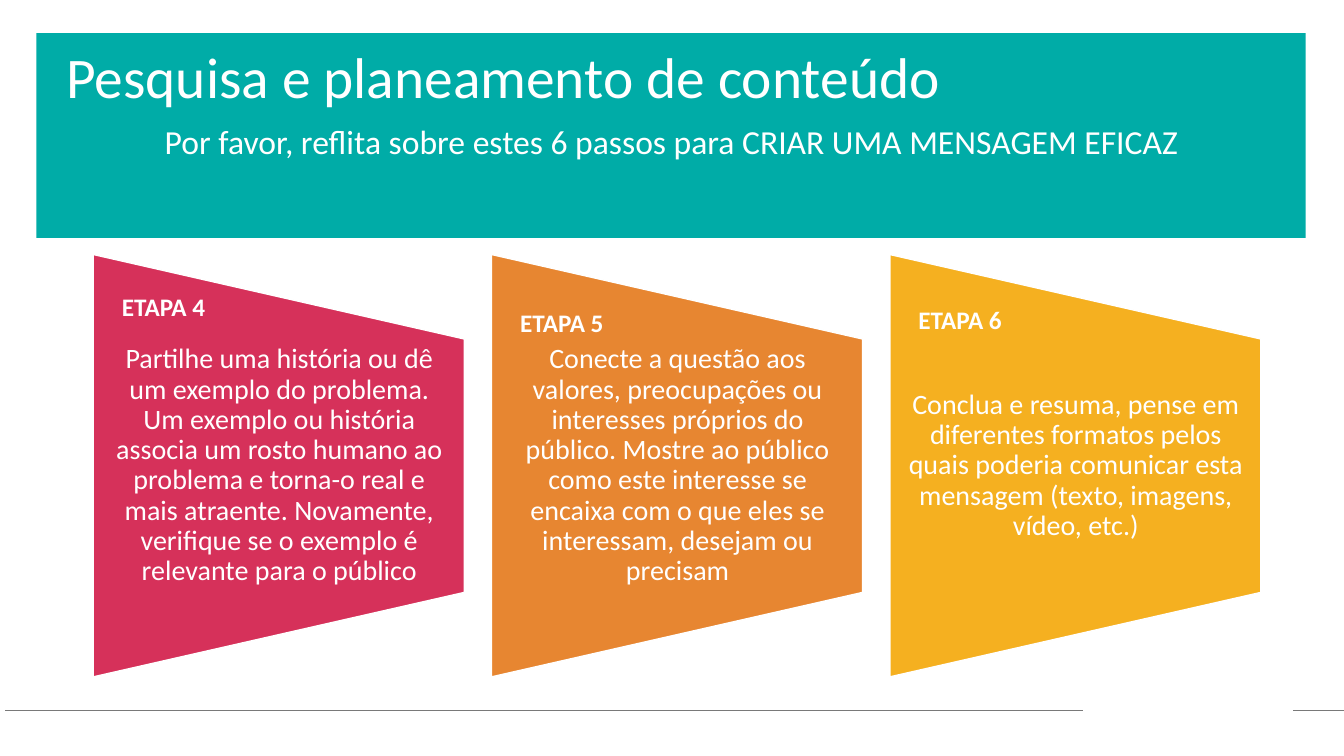
from pptx import Presentation
from pptx.dml.color import RGBColor
from pptx.enum.shapes import MSO_CONNECTOR, MSO_SHAPE
from pptx.enum.text import MSO_ANCHOR, PP_ALIGN
from pptx.oxml.ns import qn
from pptx.util import Inches, Pt
from lxml import etree

COLORS = {
    "teal": "00ACA7",
    "crimson": "D6315A",
    "orange": "E78631",
    "yellow": "F5B020",
    "white": "FFFFFF",
    "grey": "797979",
}


def color(name):
    return RGBColor.from_string(COLORS[name])


def write(para, text, size, bold=False, align=PP_ALIGN.LEFT):
    para.text = text
    para.alignment = align
    for span in para.runs:
        span.font.name = "Calibri"
        span.font.size = Pt(size)
        span.font.bold = bold
        span.font.color.rgb = color("white")


deck = Presentation()
deck.slide_width = Inches(13.33)
deck.slide_height = Inches(7.5)
page = deck.slides.add_slide(deck.slide_layouts[6])

# Header band
band = page.shapes.add_shape(
    MSO_SHAPE.RECTANGLE, Inches(0.36), Inches(0.33), Inches(12.59), Inches(2.03))
band.shadow.inherit = False
band.fill.solid()
band.fill.fore_color.rgb = color("teal")
band.line.fill.background()

# Footer rule in two parts
for start, end in [(10.74, 0.05), (13.33, 12.82)]:
    rule = page.shapes.add_connector(
        MSO_CONNECTOR.STRAIGHT, Inches(start), Inches(7.05), Inches(end), Inches(7.05))
    rule.line.color.rgb = color("grey")
    rule.line.width = Pt(0.5)
    etree.SubElement(rule._element.spPr, qn("a:effectLst"))

# Step cards: fill, label, label top, message
steps = [
    ("crimson", "ETAPA 4", 2.84,
     "Partilhe uma história ou dê um exemplo do problema. Um exemplo ou história "
     "associa um rosto humano ao problema e torna-o real e mais atraente. "
     "Novamente, verifique se o exemplo é relevante para o público"),
    ("orange", "ETAPA 5", 3.0,
     "Conecte a questão aos valores, preocupações ou interesses próprios do público. "
     "Mostre ao público como este interesse se encaixa com o que eles se interessam, "
     "desejam ou precisam"),
    ("yellow", "ETAPA 6", 2.97,
     "Conclua e resuma, pense em diferentes formatos pelos quais poderia comunicar "
     "esta mensagem (texto, imagens, vídeo, etc.)"),
]
for index, (fill, label, label_top, message) in enumerate(steps):
    offset = 3.95 * index

    card = page.shapes.add_shape(
        MSO_SHAPE.FLOWCHART_MANUAL_OPERATION,
        Inches(0.67 + offset), Inches(2.78), Inches(4.19), Inches(3.68))
    card.rotation = 270
    card.shadow.inherit = False
    card.fill.solid()
    card.fill.fore_color.rgb = color(fill)
    card.line.color.rgb = color("white")
    card.line.width = Pt(1)

    message_box = page.shapes.add_textbox(
        Inches(0.93 + offset), Inches(3.36), Inches(3.68), Inches(2.52))
    frame = message_box.text_frame
    frame.word_wrap = True
    frame.vertical_anchor = MSO_ANCHOR.MIDDLE
    frame.margin_left = frame.margin_right = Inches(0.14)
    frame.margin_top = frame.margin_bottom = Inches(0)
    write(frame.paragraphs[0], message, 20, align=PP_ALIGN.CENTER)
    frame.paragraphs[0].line_spacing = 0.9

    label_box = page.shapes.add_textbox(
        Inches(1.11 + offset), Inches(label_top), Inches(1.04), Inches(0.4))
    label_box.text_frame.word_wrap = False
    write(label_box.text_frame.paragraphs[0], label, 18, bold=True)

# Title and subtitle
title_box = page.shapes.add_textbox(
    Inches(0.56), Inches(0.44), Inches(12.2), Inches(1.83))
frame = title_box.text_frame
frame.word_wrap = True
write(frame.paragraphs[0], "Pesquisa e planeamento de conteúdo", 41)
write(frame.add_paragraph(),
      "Por favor, reflita sobre estes 6 passos para CRIAR UMA MENSAGEM EFICAZ",
      24, align=PP_ALIGN.CENTER)
for para in frame.paragraphs:
    para.line_spacing = 0.9
    para.space_before = Pt(10)

deck.save("out.pptx")
